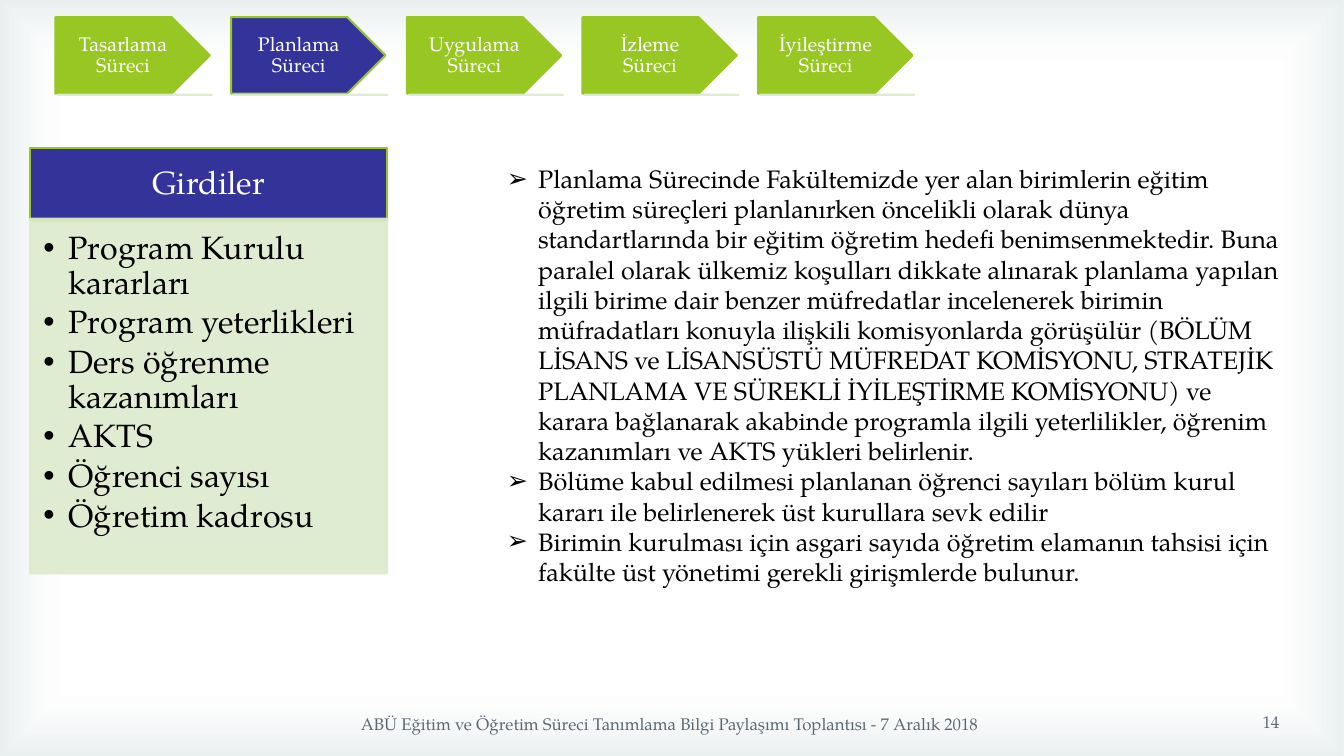
from pptx import Presentation
from pptx.dml.color import RGBColor
from pptx.enum.shapes import MSO_SHAPE
from pptx.enum.text import MSO_ANCHOR, PP_ALIGN
from pptx.oxml import parse_xml
from pptx.oxml.ns import nsdecls, qn
from pptx.util import Inches, Pt

RECT, ARROW = MSO_SHAPE.RECTANGLE, MSO_SHAPE.PENTAGON
TOP, MIDDLE = MSO_ANCHOR.TOP, MSO_ANCHOR.MIDDLE
LEFT, CENTER, RIGHT = PP_ALIGN.LEFT, PP_ALIGN.CENTER, PP_ALIGN.RIGHT
FONT = "TeX Gyre Pagella"
GREEN, BLUE, PALE = "98C723", "333399", "DDEBCD"
WHITE, BLACK, GREY = "FFFFFF", "000000", "5B6973"

deck = Presentation()
deck.slide_width, deck.slide_height = Inches(13.33), Inches(7.5)
slide = deck.slides.add_slide(deck.slide_layouts[6])
# Boxes are left, top, width, height in percent of the slide
UNITS = (deck.slide_width / 100, deck.slide_height / 100) * 2


def draw(kind, box, fill=None, line=None, alpha=100):
    shape = slide.shapes.add_shape(kind, *(int(n * u) for n, u in zip(box, UNITS)))
    shape.shadow.inherit = False
    for part, tint in ((shape.fill, fill), (shape.line.fill, line)):
        if tint is None:
            part.background()
        else:
            part.solid()
            part.fore_color.rgb = RGBColor.from_string(tint)
    if line:
        shape.line.width = Pt(1.5)
    if alpha < 100:
        for tint in shape.element.spPr.iter(qn("a:srgbClr")):
            tint.append(parse_xml(f'<a:alpha {nsdecls("a")} val="{alpha * 1000}"/>'))
    return shape


def write(box, lines, size, tint, align, anchor=MIDDLE, pads=(0.1, 0.05, 0.1, 0.05),
          bullet=None, indent=0, **format):
    frame = slide.shapes.add_textbox(*(int(n * u) for n, u in zip(box, UNITS))).text_frame
    sides = dict(zip(("left", "top", "right", "bottom"), pads))
    for side, pad in sides.items():
        setattr(frame, f"margin_{side}", Inches(pad))
    frame.word_wrap, frame.vertical_anchor = True, anchor
    for i, line in enumerate(lines):
        para = frame.paragraphs[0] if i == 0 else frame.add_paragraph()
        for key, value in {"alignment": align, **format}.items():
            setattr(para, key, value)
        run = para.add_run()
        run.text = line
        for key, value in {"name": FONT, "size": Pt(size)}.items():
            setattr(run.font, key, value)
        run.font.color.rgb = RGBColor.from_string(tint)
        if bullet:
            props = para._p.get_or_add_pPr()
            props.set("marL", str(Inches(indent)))
            props.set("indent", str(-Inches(indent)))
            props.append(parse_xml(f'<a:buFont {nsdecls("a")} typeface="Arial"/>'))
            props.append(parse_xml(f'<a:buChar {nsdecls("a")} char="{bullet}"/>'))


# Backdrop with shaded edges
back = draw(RECT, (0, 0, 100, 100))
props = back.element.spPr
props.replace(props.find(qn("a:noFill")), parse_xml(
    f'<a:gradFill {nsdecls("a")}><a:gsLst>'
    '<a:gs pos="83000"><a:srgbClr val="FFFFFF"><a:alpha val="11000"/></a:srgbClr></a:gs>'
    '<a:gs pos="100000"><a:srgbClr val="A4B7BB"><a:alpha val="23000"/></a:srgbClr></a:gs>'
    '</a:gsLst><a:path path="rect">'
    '<a:fillToRect l="50000" t="50000" r="50000" b="50000"/></a:path></a:gradFill>'))

# Process steps
steps = ["Tasarlama", "Planlama", "Uygulama", "İzleme", "İyileştirme"]
for i, step in enumerate(steps):
    x = 4.13 + 13.07 * i
    draw(ARROW, (x, 2.27, 11.48, 10.13), BLUE if step == "Planlama" else GREEN, GREEN)
    write((x, 2.27, 10.05, 10.13), [f"{step} Süreci"], 14, WHITE, CENTER,
          pads=(0.11, 0.06) * 2, line_spacing=0.9)
    draw(RECT, (x + 0.15, 12.53, 11.48, 0), PALE, PALE, 90)

# Inputs panel
head = (2.25, 19.6, 26.55, 9.6)
body = (2.25, 28.93, 26.55, 46.93)
draw(RECT, head, BLUE, GREEN)
write(head, ["Girdiler"], 23, WHITE, CENTER, pads=(0.18, 0.1) * 2, line_spacing=0.9)
draw(RECT, body, PALE, PALE, 90)
inputs = ["Program Kurulu kararları", "Program yeterlikleri", "Ders öğrenme kazanımları",
          "AKTS", "Öğrenci sayısı", "Öğretim kadrosu"]
write(body, inputs, 23, BLACK, LEFT, TOP, (0.13, 0.13, 0.18, 0.2), "•", 0.25,
      line_spacing=0.9, space_after=Pt(3.45))

# Explanation
notes = [
    "Planlama Sürecinde Fakültemizde yer alan birimlerin eğitim öğretim süreçleri "
    "planlanırken öncelikli olarak dünya standartlarında bir eğitim öğretim hedefi "
    "benimsenmektedir. Buna paralel olarak ülkemiz koşulları dikkate alınarak planlama "
    "yapılan ilgili birime dair benzer müfredatlar incelenerek birimin müfradatları "
    "konuyla ilişkili komisyonlarda görüşülür (BÖLÜM LİSANS ve LİSANSÜSTÜ MÜFREDAT "
    "KOMİSYONU, STRATEJİK PLANLAMA VE SÜREKLİ İYİLEŞTİRME KOMİSYONU) ve karara "
    "bağlanarak akabinde programla ilgili yeterlilikler, öğrenim kazanımları ve AKTS "
    "yükleri belirlenir.",
    "Bölüme kabul edilmesi planlanan öğrenci sayıları bölüm kurul kararı ile "
    "belirlenerek üst kurullara sevk edilir",
    "Birimin kurulması için asgari sayıda öğretim elamanın tahsisi için fakülte üst "
    "yönetimi gerekli girişmlerde bulunur.",
]
write((36.98, 20.93, 59.48, 66), notes, 18, BLACK, LEFT, TOP, bullet="➢", indent=0.31)

# Footer and page number
footer = "ABÜ Eğitim ve Öğretim Süreci Tanımlama Bilgi Paylaşımı Toplantısı - 7 Aralık 2018"
write((11.55, 93.07, 76.58, 5.33), [footer], 12, GREY, CENTER)
write((72.6, 92.8, 23.33, 5.33), ["14"], 12, GREY, RIGHT)

deck.save("out.pptx")
